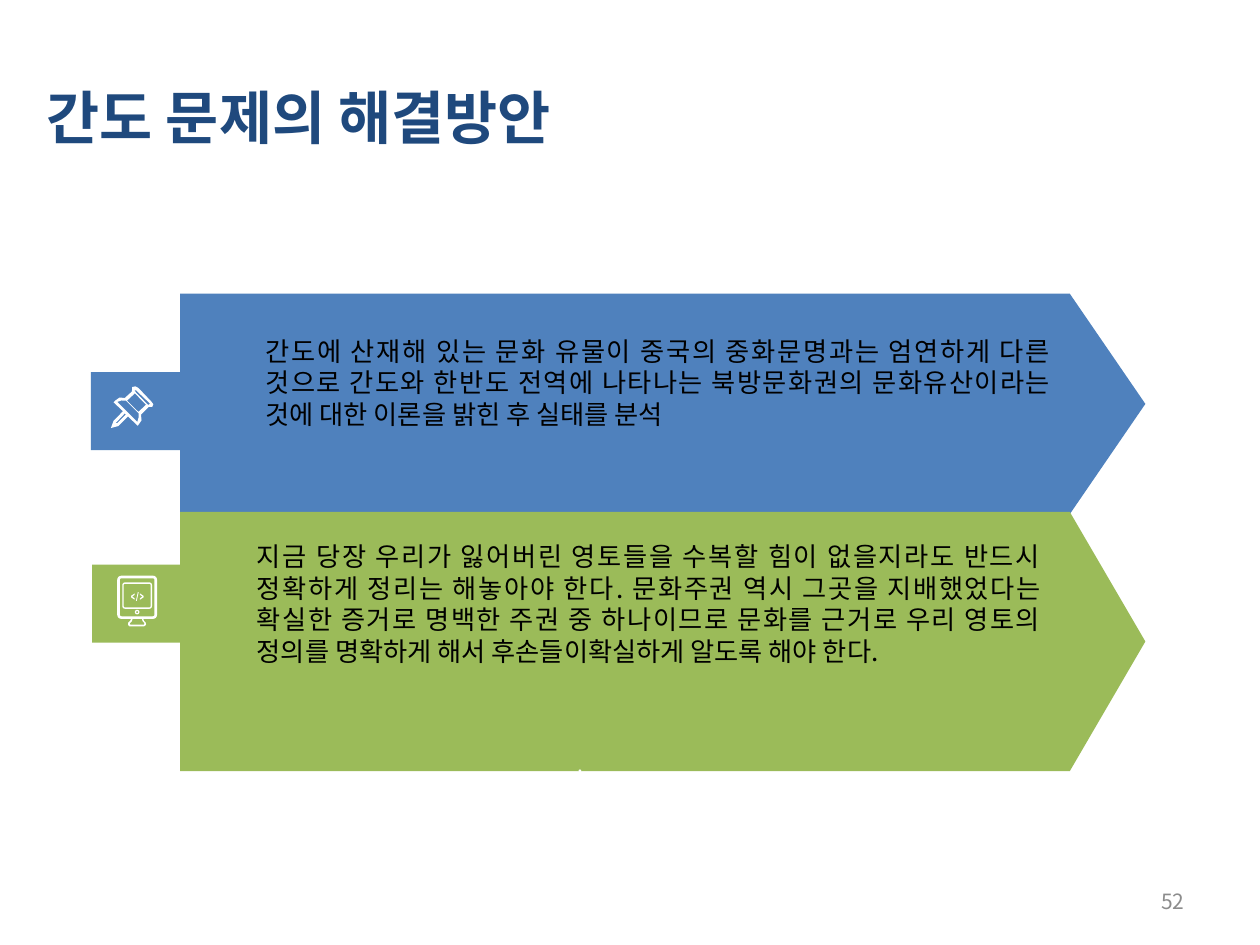
from dataclasses import dataclass
from math import cos, pi, sin

from lxml import etree
from pptx import Presentation, util as u
from pptx.dml.color import RGBColor
from pptx.enum import shapes as es, text as et
from pptx.oxml.ns import qn

Dots = list[tuple[float, float]]
Box = tuple[float, float, float, float]

HUES = {"blue": "4F81BD", "green": "9BBB59", "navy": "1F497D",
        "gray": "8C8C8C", "black": "000000", "white": "FFFFFF"}
FACE = "Noto Sans CJK KR"
LEFT, WIDE, TIP = 103, 551.5, 43.2
TAB = (51, 44.6)


@dataclass
class Band:
    hue: str
    top: float
    high: float
    tab: tuple[float, float]
    area: Box
    words: str


@dataclass
class Style:
    size: float
    hue: str
    align: et.PP_ALIGN = et.PP_ALIGN.JUSTIFY
    face: str = FACE
    bold: bool = False


BANDS = [
    Band("blue", 167.8, 126, (51.9, 212.7), (144.7, 187.9, 463, 76.3),
         "간도에 산재해 있는 문화 유물이 중국의 중화문명과는 엄연하게 다른 "
         "것으로 간도와 한반도 전역에 나타나는 북방문화권의 문화유산이라는 "
         "것에 대한 이론을 밝힌 후 실태를 분석"),
    Band("green", 292.5, 148.2, (52.6, 322.6), (139.7, 305.3, 462.3, 113),
         "지금 당장 우리가 잃어버린 영토들을 수복할 힘이 없을지라도 반드시 "
         "정확하게 정리는 해놓아야 한다. 문화주권 역시 그곳을 지배했었다는 "
         "확실한 증거로 명백한 주권 중 하나이므로 문화를 근거로 우리 영토의 "
         "정의를 명확하게 해서 후손들이확실하게 알도록 해야 한다."),
]

PIN: list[Dots] = [
    [(80.6, 236.9), (85, 232.6), (87, 232.6), (87.6, 231), (86.4, 229.4),
     (79.2, 221.8), (77.4, 220.8), (75.6, 221.2), (75.4, 223.8), (71.3, 227.5),
     (68.4, 227.2), (65.8, 229), (64.9, 229.9), (70.3, 235), (64.9, 240.6),
     (63.4, 244.6), (67.6, 243.5), (73.2, 238), (78.7, 243.3), (79.4, 242.5),
     (80.9, 240.2)],
    [(77.8, 223.1), (85.8, 230.7), (85, 231.4), (84.2, 231), (77.6, 224.2),
     (76.9, 223)],
    [(79.1, 235.4), (72.6, 229), (77.1, 224.8), (83.5, 231.3)],
    [(66.9, 241.9), (66.1, 241.8), (71.3, 236.3), (72, 236.9)],
    [(74.2, 236.9), (67, 229.7), (69.5, 228.9), (72, 229), (79.2, 236.2),
     (79.2, 238.7), (78.5, 241.2)],
]
STAND: list[Dots] = [
    [(75, 353.6), (74.5, 354.6), (73.3, 355.8), (73.2, 357.1), (74, 357.9),
     (82.4, 357.9), (83.5, 357.1), (83.3, 355.8), (82.3, 354.8), (81.9, 353.6)],
    [(75.8, 353.6), (75.4, 355), (74.2, 356.2), (74.4, 357),
     (82.3, 357), (82.6, 356.2), (81.5, 355), (81.1, 353.6)],
]
ANGLE: Dots = [(74.9, 341.3), (77, 342.7), (77, 341.9), (75.6, 340.9),
               (77, 339.9), (77, 339.1), (74.9, 340.5)]
SLASH: Dots = [(78.8, 338.4), (79.3, 338.4), (78.2, 343.4), (77.7, 343.4)]


def tint(hue: str) -> RGBColor:
    return RGBColor.from_string(HUES[hue])


def paint(shape, hue: str) -> None:
    shape.shadow.inherit = False
    shape.fill.solid()
    shape.fill.fore_color.rgb = tint(hue)
    shape.line.fill.background()


def place(box: Box) -> list[u.Length]:
    return [u.Pt(n) for n in box]


def write(frame, words: str, style: Style) -> None:
    frame.word_wrap = True
    frame.text = words
    para = frame.paragraphs[0]
    para.alignment = style.align
    para.line_spacing = u.Pt(style.size * 1.2)
    font = para.font
    font.size, font.bold, font.name = u.Pt(style.size), style.bold, style.face
    font.color.rgb = tint(style.hue)
    props = para._p.pPr.find(qn("a:defRPr"))
    etree.SubElement(props, qn("a:ea")).set("typeface", FACE)


def label(slide, box: Box, words: str, style: Style):
    frame = slide.shapes.add_textbox(*place(box)).text_frame
    write(frame, words, style)
    return frame


def curve(box: Box, bend: float) -> Dots:
    left, top, right, base = box
    hubs = [(right - bend, base - bend), (left + bend, base - bend),
            (left + bend, top + bend), (right - bend, top + bend)]
    return [(x + bend * cos((turn + step / 4) * pi / 2),
             y + bend * sin((turn + step / 4) * pi / 2))
            for turn, (x, y) in enumerate(hubs) for step in range(5)]


def ring(box: Box, bend: float, rim: float) -> list[Dots]:
    left, top, right, base = box
    hole = (left + rim, top + rim, right - rim, base - rim)
    return [curve(box, bend), curve(hole, bend - rim)]


def trace(slide, loops: list[Dots]) -> None:
    fine = [[(x * 100, y * 100) for x, y in loop] for loop in loops]
    pen = slide.shapes.build_freeform(*fine[0][0], scale=u.Pt(1) / 100)
    pen.add_line_segments(fine[0][1:])
    for loop in fine[1:]:
        pen.move_to(*loop[0])
        pen.add_line_segments(loop[1:])
    paint(pen.convert_to_shape(), "white")


def draw(slide, band: Band) -> None:
    kind = es.MSO_SHAPE
    tab = slide.shapes.add_shape(kind.RECTANGLE, *place(band.tab + TAB))
    paint(tab, band.hue)
    arrow = slide.shapes.add_shape(
        kind.PENTAGON, *place((LEFT, band.top, WIDE, band.high)))
    arrow.adjustments[0] = TIP / band.high
    paint(arrow, band.hue)
    label(slide, band.area, band.words, Style(15, "black"))


def main() -> None:
    deck = Presentation()
    deck.slide_width, deck.slide_height = u.Pt(720), u.Pt(540)
    slide = deck.slides.add_slide(deck.slide_layouts[5])

    title = slide.shapes.title
    title.left, title.top, title.width, title.height = place((21.6, 43.5, 333, 45.4))
    frame = title.text_frame
    frame.margin_left = frame.margin_right = u.Pt(5)
    frame.margin_top = frame.margin_bottom = u.Pt(3)
    frame.vertical_anchor = et.MSO_ANCHOR.TOP
    write(frame, "간도 문제의 해결방안",
          Style(33, "navy", et.PP_ALIGN.LEFT, "Arial", True))

    page = label(slide, (516.2, 500.4, 167.8, 28.8), "52",
                 Style(12, "gray", et.PP_ALIGN.RIGHT))
    page.vertical_anchor = et.MSO_ANCHOR.MIDDLE

    for band in BANDS:
        draw(slide, band)
    label(slide, (320.4, 426.2, 290.9, 21.6), " .", Style(12, "white"))

    trace(slide, PIN)
    trace(slide, ring((67, 329, 89.8, 353.7), 2.4, 1.5) + STAND)
    trace(slide, ring((69.9, 332.8, 86.9, 347.9), 1.6, 0.8))
    trace(slide, ring((77.1, 348.5, 79.7, 351.1), 1.3, 0.7))
    for loop in (ANGLE, SLASH, [(157 - x, y) for x, y in ANGLE]):
        trace(slide, [loop])

    deck.save("out.pptx")


if __name__ == "__main__":
    main()
